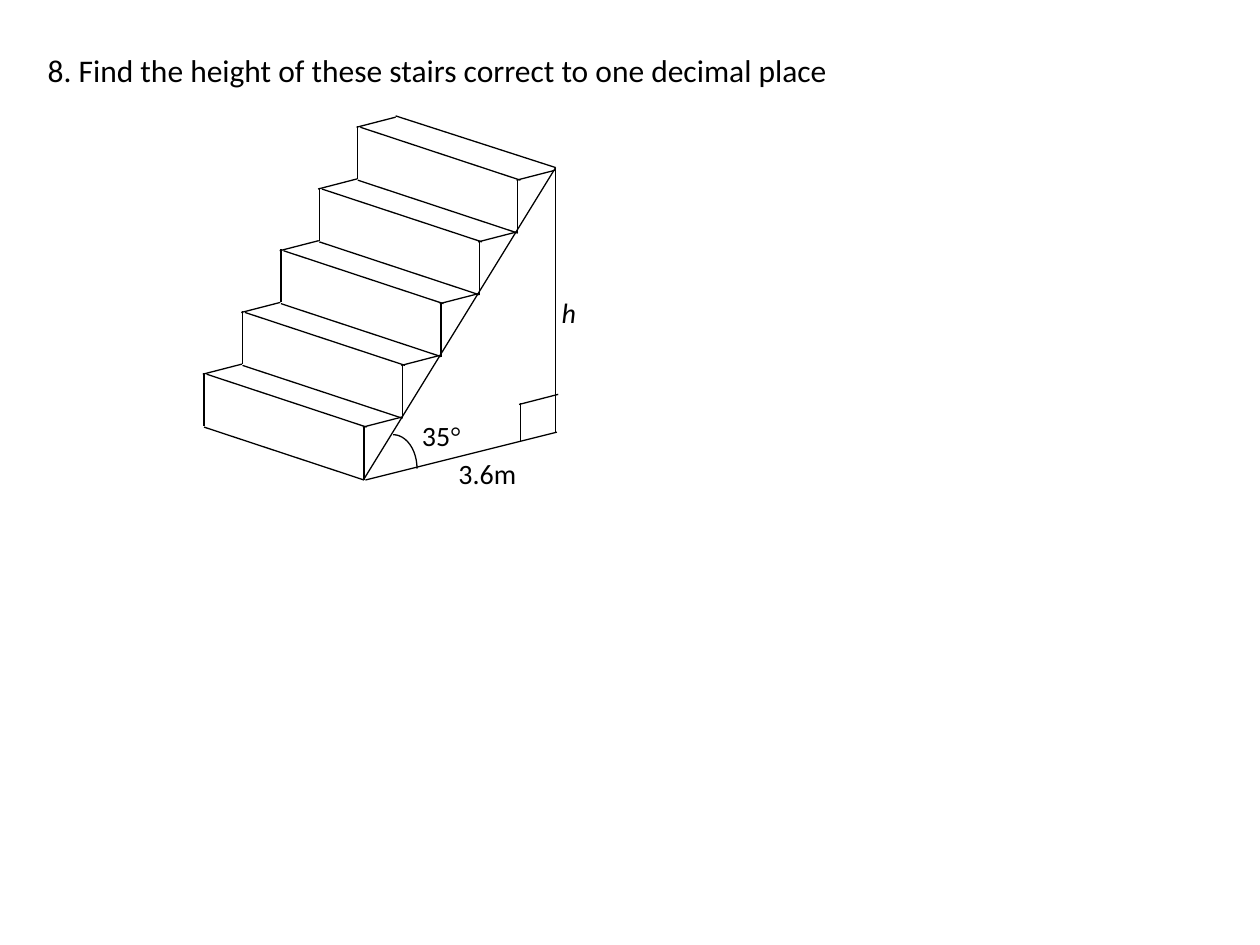
from lxml.etree import SubElement
from pptx import Presentation
from pptx.dml.color import RGBColor as Rgb
from pptx.enum.shapes import MSO_CONNECTOR as Link, MSO_SHAPE as Shape
from pptx.oxml.ns import qn
from pptx.util import Inches, Pt

INK = {"line": "000000", "text": "000000"}
STEPS = 5
RUN, RISE = 1.22 / (STEPS - 1), 1.96 / (STEPS - 1)
STEP = [
    (0.03, 0.01, 1.3, 0.43),
    (0.01, 0.43, 1.28, 0.85),
    (1.28, 0.43, 1.28, 0.85),
    (1.27, 0.43, 1.58, 0.35),
    (0.01, 0, 0.01, 0.42),
    (0, 0.01, 0.31, -0.07),
]
FRAME = [
    (1.53, 0, 2.8, 0.41),
    (1.29, 2.89, 2.81, 2.51),
    (2.8, 0.41, 2.8, 2.51),
    (2.52, 2.28, 2.52, 2.58),
    (2.51, 2.29, 2.82, 2.21),
    (1.28, 2.88, 2.8, 0.41),
]


def pen(line):
    line.color.rgb = Rgb.from_string(INK["line"])
    line.width = Pt(0.75)


def draw(shapes, left, top, ends):
    x1, y1, x2, y2 = ends
    edge = shapes.add_connector(
        Link.STRAIGHT,
        Inches(left + x1), Inches(top + y1),
        Inches(left + x2), Inches(top + y2),
    )
    pen(edge.line)
    SubElement(edge._element.spPr, qn("a:effectLst"))


def write(shapes, box, parts, size, after=0, slant=None):
    label = shapes.add_textbox(*map(Inches, box))
    frame = label.text_frame
    frame.word_wrap = True
    para = frame.paragraphs[0]
    para.space_after = Pt(after)
    for text, face in parts:
        run = para.add_run()
        run.text = text
        run.font.name = face
        run.font.size = Pt(size)
        run.font.italic = slant
        run.font.color.rgb = Rgb.from_string(INK["text"])


def add_stairs(shapes, left, top):
    for level in reversed(range(STEPS)):
        for ends in STEP:
            draw(shapes, left + level * RUN, top + 2.04 - level * RISE, ends)
    for ends in FRAME:
        draw(shapes, left, top, ends)
    arc = shapes.add_shape(
        Shape.ARC, Inches(left + 1.32), Inches(top + 2.53), Inches(0.38), Inches(0.54)
    )
    arc.shadow.inherit = False
    arc.fill.background()
    pen(arc.line)
    labels = [
        (1.64, 2.35, [("35", "Calibri"), ("°", "Times New Roman")], None),
        (1.93, 2.65, [("3.6m", "Calibri")], None),
        (2.75, 1.38, [("h", "Calibri")], True),
    ]
    for x, y, parts, slant in labels:
        write(shapes, (left + x, top + y, 0.88, 0.42), parts, 16, 10, slant)


def main():
    deck = Presentation()
    deck.slide_width, deck.slide_height = Inches(10), Inches(7.5)
    slide = deck.slides.add_slide(deck.slide_layouts[6])
    task = "8. Find the height of these stairs correct to one decimal place"
    write(slide.shapes, (0.28, 0.36, 7.48, 0.4), [(task, "Calibri")], 18)
    add_stairs(slide.shapes.add_group_shape().shapes, 1.61, 0.92)
    deck.save("out.pptx")


if __name__ == "__main__":
    main()
